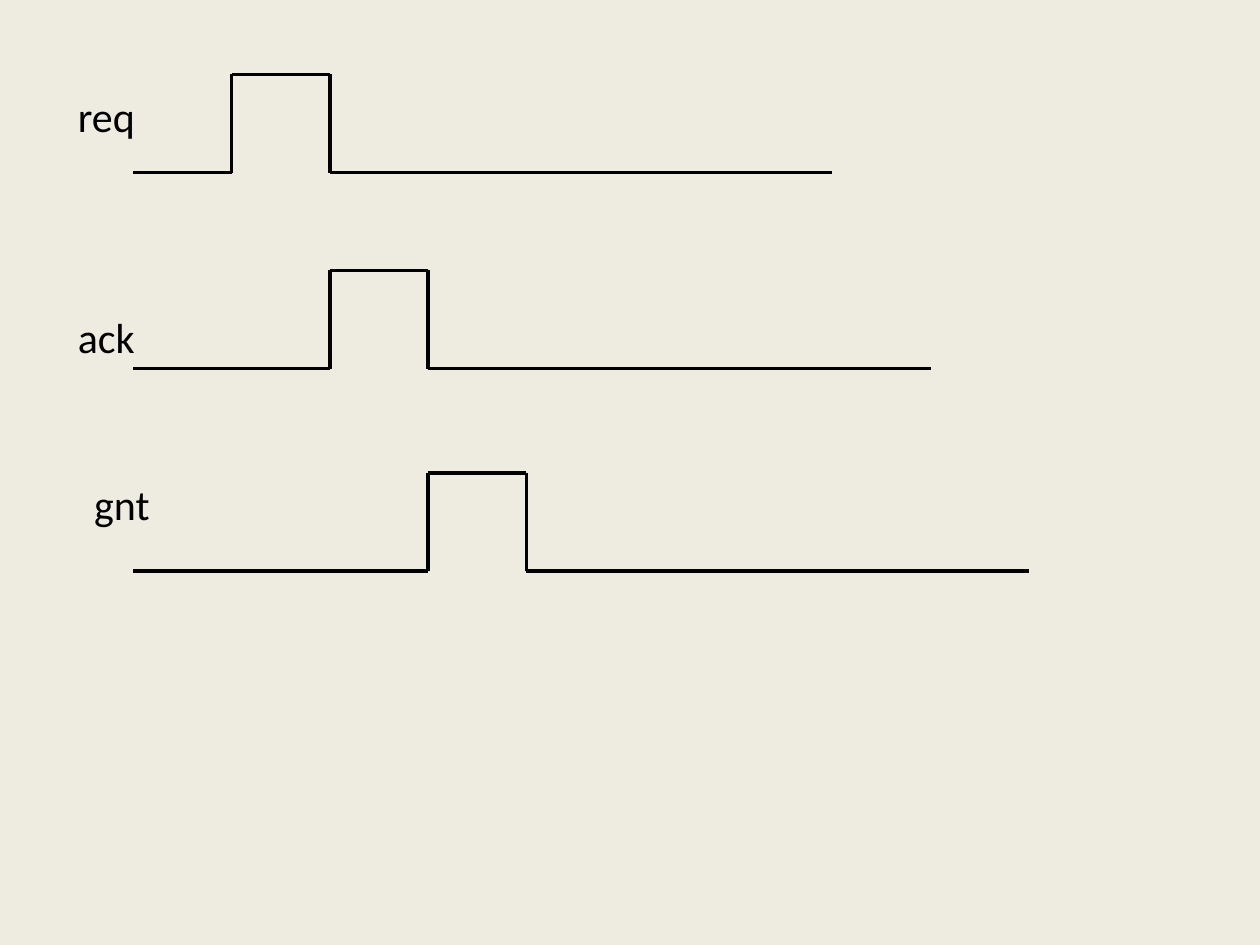
import pptx
import pptx.util
import pptx.dml.color
import pptx.enum.shapes
import pptx.enum.text
import pptx.oxml

Cm = pptx.util.Cm
BLACK = pptx.dml.color.RGBColor(0x00, 0x00, 0x00)
CREAM = pptx.dml.color.RGBColor(0xEE, 0xEC, 0xE1)

START = 2.69   # left end of every wave
STEP = 1.98    # width and height of a pulse
TAIL = 10.13   # low line after a pulse
FONT = {"name": "Calibri", "size": pptx.util.Pt(24)}
FIT = pptx.enum.text.MSO_AUTO_SIZE.SHAPE_TO_FIT_TEXT

# name, label left, top, width, wrap, base line of the wave
WAVES = [
    ("req", 1.32, 1.7, 1.68, False, 3.48),
    ("ack", 1.32, 6.15, 2.08, True, 7.43),
    ("gnt", 1.65, 9.53, 2.08, True, 11.51),
]

deck = pptx.Presentation()
deck.slide_width, deck.slide_height = Cm(25.4), Cm(19.05)
slide = deck.slides.add_slide(deck.slide_layouts[6])
slide.background.fill.solid()
slide.background.fill.fore_color.rgb = CREAM

for turn, (name, left, top, width, wrap, base) in enumerate(WAVES, 1):
    rise = START + turn * STEP
    fall = rise + STEP
    high = base - STEP
    points = [(START, base), (rise, base), (rise, high),
              (fall, high), (fall, base), (fall + TAIL, base)]

    wave = slide.shapes.add_group_shape()
    for (x1, y1), (x2, y2) in zip(points, points[1:]):
        line = wave.shapes.add_connector(
            pptx.enum.shapes.MSO_CONNECTOR.STRAIGHT,
            Cm(x1), Cm(y1), Cm(x2), Cm(y2))
        line.line.color.rgb = BLACK
        line.line.width = pptx.util.Pt(2)
        props = line._element.spPr
        props.append(pptx.oxml.parse_xml(
            '<a:effectLst xmlns:a='
            '"http://schemas.openxmlformats.org/drawingml/2006/main"/>'))

    label = slide.shapes.add_textbox(Cm(left), Cm(top), Cm(width), Cm(1.27))
    frame = label.text_frame
    for key, value in {"word_wrap": wrap, "auto_size": FIT}.items():
        setattr(frame, key, value)
    run = frame.paragraphs[0].add_run()
    run.text = name
    for key, value in FONT.items():
        setattr(run.font, key, value)
    run.font.color.rgb = BLACK

deck.save("out.pptx")
